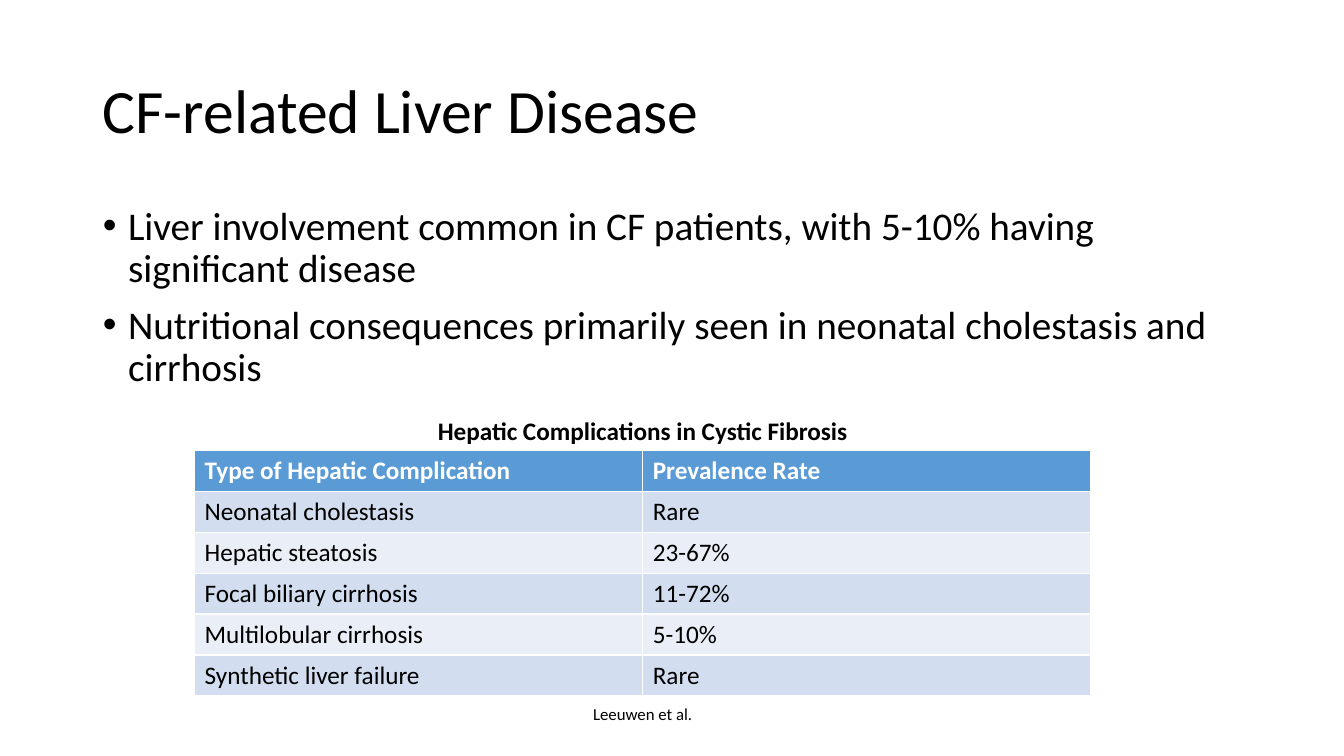
from pptx import Presentation
from pptx.dml.color import RGBColor
from pptx.enum.text import MSO_ANCHOR, MSO_AUTO_SIZE, PP_ALIGN
from pptx.util import Pt

PX = 9144  # EMU per px, 100 px to the inch
LEFT, CENTER = PP_ALIGN.LEFT, PP_ALIGN.CENTER
MIDDLE, TOP = MSO_ANCHOR.MIDDLE, MSO_ANCHOR.TOP
NO_AUTOFIT = MSO_AUTO_SIZE.NONE

FONT = "Calibri"
BLACK, WHITE = "000000", "FFFFFF"
HEADER_FILL = "5B9BD5"
BAND_FILLS = ("EAEFF7", "D2DEEF")

TITLE = "CF-related Liver Disease"
POINTS = [
    "Liver involvement common in CF patients, with 5-10% having significant disease",
    "Nutritional consequences primarily seen in neonatal cholestasis and cirrhosis",
]
CAPTION = "Hepatic Complications in Cystic Fibrosis"
CITATION = "Leeuwen et al."
COMPLICATIONS = [
    ("Type of Hepatic Complication", "Prevalence Rate"),
    ("Neonatal cholestasis", "Rare"),
    ("Hepatic steatosis", "23-67%"),
    ("Focal biliary cirrhosis", "11-72%"),
    ("Multilobular cirrhosis", "5-10%"),
    ("Synthetic liver failure", "Rare"),
]


def color(hex_string):
    return RGBColor.from_string(hex_string)


def emu(box):
    return [length * PX for length in box]


def style(paragraph, size, hex_color=BLACK, bold=False, align=LEFT):
    paragraph.alignment = align
    font = paragraph.font
    font.name, font.size, font.bold = FONT, Pt(size), bold
    font.color.rgb = color(hex_color)


def prepare_placeholder(shape, box, anchor):
    """Move a placeholder to the box and return its text frame."""
    shape.left, shape.top, shape.width, shape.height = emu(box)
    frame = shape.text_frame
    frame.auto_size = NO_AUTOFIT
    frame.vertical_anchor = anchor
    return frame


def add_title(slide, box):
    frame = prepare_placeholder(slide.shapes.title, box, MIDDLE)
    frame.text = TITLE
    paragraph = frame.paragraphs[0]
    style(paragraph, 44)
    paragraph.line_spacing = 0.9


def add_points(slide, box):
    frame = prepare_placeholder(slide.placeholders[1], box, TOP)
    frame.text = "\n".join(POINTS)
    for paragraph in frame.paragraphs:
        style(paragraph, 28)
        paragraph.line_spacing = 0.9
        paragraph.space_before = Pt(10)
        properties = paragraph._p.get_or_add_pPr()
        properties.set("marL", str(25 * PX))
        properties.set("indent", str(-25 * PX))


def add_label(slide, box, text, size, bold=False):
    frame = slide.shapes.add_textbox(*emu(box)).text_frame
    frame.word_wrap = True
    frame.text = text
    style(frame.paragraphs[0], size, bold=bold, align=CENTER)


def add_complications(slide, box):
    """Place the table in the box, its caption above and its citation below."""
    left, top, width, height = box
    table = slide.shapes.add_table(
        len(COMPLICATIONS), len(COMPLICATIONS[0]), *emu(box)).table
    for row, texts in enumerate(COMPLICATIONS):
        is_header = row == 0
        for column, text in enumerate(texts):
            cell = table.cell(row, column)
            cell.text = text
            cell.fill.solid()
            cell.fill.fore_color.rgb = color(
                HEADER_FILL if is_header else BAND_FILLS[row % 2])
            style(cell.text_frame.paragraphs[0], 18,
                  WHITE if is_header else BLACK, is_header)
    add_label(slide, (left, top - 40, width, 40), CAPTION, 18, bold=True)
    add_label(slide, (left, top + height + 3, width, 30), CITATION, 12)


def main():
    presentation = Presentation()
    presentation.slide_width, presentation.slide_height = emu((1333, 750))
    slide = presentation.slides.add_slide(presentation.slide_layouts[1])
    add_title(slide, (92, 40, 1150, 145))
    add_points(slide, (92, 200, 1150, 476))
    add_complications(slide, (193, 447, 889, 243))
    presentation.save("out.pptx")


if __name__ == "__main__":
    main()
